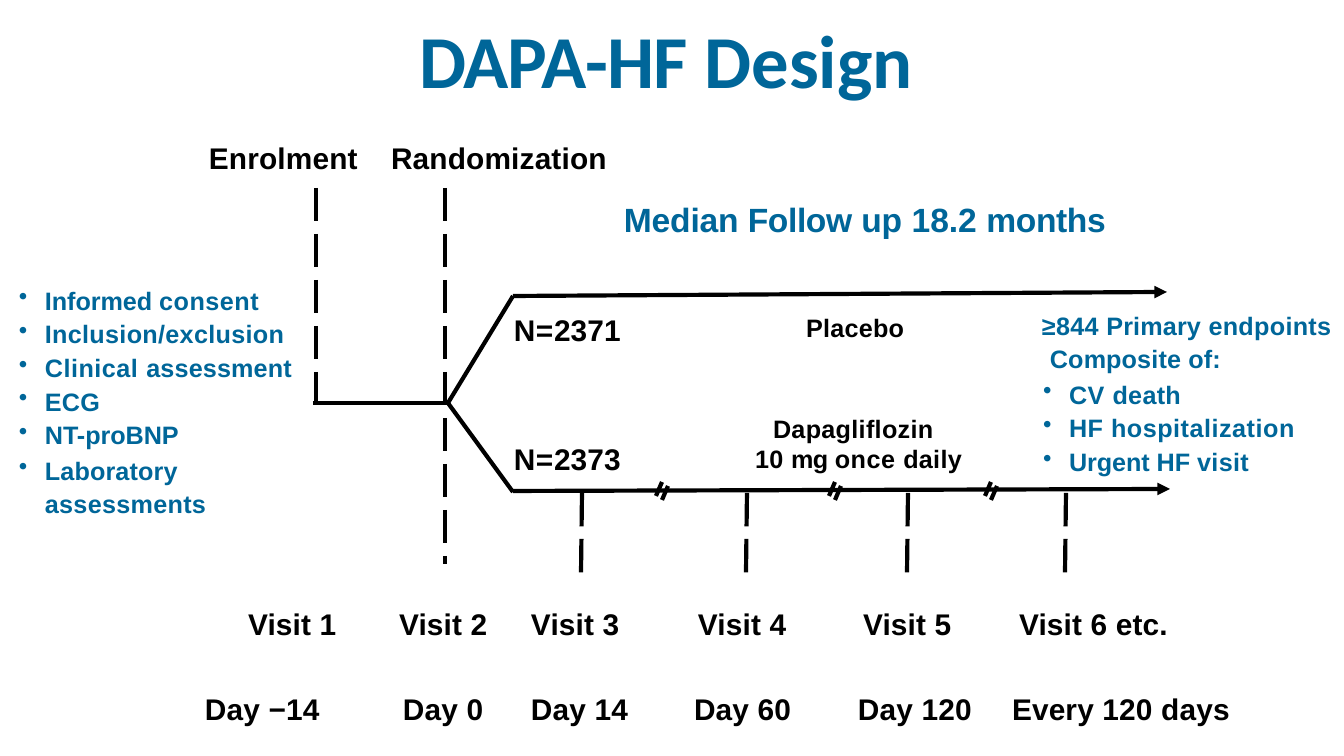
from pptx import Presentation
from pptx.dml.color import RGBColor
from pptx.enum.dml import MSO_LINE_DASH_STYLE as Dash
from pptx.enum.shapes import MSO_CONNECTOR as Conn
from pptx.oxml.ns import qn
from pptx.util import Emu, Pt
from lxml.etree import SubElement

SCALE = 914400 / 134.4  # EMU in one px
BLUE, BLACK = "006699", "000000"
HEAD = 16  # points
BODY = 13.5


def px(n):
    return Emu(round(n * SCALE))


def color(code):
    return RGBColor.from_string(code)


def line(slide, x1, y1, x2, y2, dash=False, arrow=False):
    """Draw a straight black line, dashed or with an arrowhead if asked."""
    link = slide.shapes.add_connector(Conn.STRAIGHT, px(x1), px(y1), px(x2), px(y2))
    link.line.color.rgb = color(BLACK)
    link.line.width = Pt(2.25)
    if dash:
        link.line.dash_style = Dash.LONG_DASH
    if arrow:
        SubElement(link.line._get_or_add_ln(), qn("a:tailEnd"), type="triangle")
    SubElement(link._element.spPr, qn("a:effectLst"))


def box(slide, x, y, w, h, inset=3):
    """Add an empty text box and return its frame."""
    frame = slide.shapes.add_textbox(px(x), px(y), px(w), px(h)).text_frame
    frame.word_wrap = True
    frame.margin_left = frame.margin_right = frame.margin_bottom = 0
    frame.margin_top = px(inset)
    return frame


def fill(para, runs, size, code, font="Arial", before=1.2, left=1, first=0):
    """Fill a paragraph with (text, letter spacing in points) runs."""
    para.space_before = Pt(before)
    props = para._p.get_or_add_pPr()
    props.set("marL", str(px(left)))
    props.set("indent", str(px(first)))
    for words, gap in runs:
        run = para.add_run()
        run.text = words
        run.font.name = font
        run.font.size = Pt(size)
        run.font.bold = True
        run.font.color.rgb = color(code)
        run._r.get_or_add_rPr().set("spc", str(round(gap * 100)))


def label(slide, x, y, w, h, runs, size=HEAD, code=BLACK, font="Arial"):
    """Put one line of text on the slide."""
    fill(box(slide, x, y, w, h).paragraphs[0], runs, size, code, font)


def bullets(slide, x, y, w, h, items):
    """Put a bulleted list on the slide."""
    frame = box(slide, x, y, w, h, inset=5)
    for i, runs in enumerate(items):
        para = frame.add_paragraph() if i else frame.paragraphs[0]
        fill(para, runs, BODY, BLUE, before=1.85 if i else 2.8, left=28, first=-26)
        SubElement(para._p.get_or_add_pPr(), qn("a:buChar"), char="•")
    return frame


def chart(slide):
    # Fork from enrolment into the two arms
    line(slide, 313, 403, 448, 403)
    line(slide, 448, 403, 513, 296)
    line(slide, 448, 403, 513, 492)
    line(slide, 513, 296, 1167, 292, arrow=True)
    line(slide, 513, 491, 1170, 489, arrow=True)

    # Enrolment, randomization and later visits
    line(slide, 316, 188, 316, 403, dash=True)
    line(slide, 445, 188, 445, 564, dash=True)
    for x in (582, 747, 908, 1066):
        line(slide, x, 493, x - 1, 574, dash=True)

    # Breaks in the time axis
    for x in (656, 829, 985):
        for dx, dy in ((0, 0), (6, 4)):
            line(slide, x + dx + 6, 482 + dy, x + dx, 496 + dy)


def arms(slide):
    # Group sizes and treatments
    for y, count in ((309, "2371"), (438, "2373")):
        label(slide, 513, y, 116, 40, [("N=", 0.3), (count, 0.1)])
    label(slide, 805, 309, 108, 35, [("Placebo", 0.17)], BODY)
    frame = box(slide, 754, 410, 219, 65)
    fill(frame.paragraphs[0], [("Dapagliflozin", 0.2)], BODY, BLACK, left=19)
    fill(frame.add_paragraph(),
         [("10 ", 0.2), ("mg ", -0.2), ("once ", 0.3), ("daily", 0.2)],
         BODY, BLACK, before=0)


def visits(slide):
    # Visit row and day row: x, width, text
    rows = {
        603: ((247, 95, "Visit 1"), (398, 95, "Visit 2"), (530, 95, "Visit 3"),
              (697, 95, "Visit 4"), (862, 95, "Visit 5"), (1018, 164, "Visit 6 etc.")),
        688: ((204, 130, "Day −14"), (402, 87, "Day 0"), (530, 103, "Day 14"),
              (693, 103, "Day 60"), (857, 121, "Day 120"), (1011, 224, "Every 120 days")),
    }
    for y, cells in rows.items():
        for x, w, words in cells:
            label(slide, x, y, w, 40, [(words, 0.1)])


def notes(slide):
    # Screening list on the left
    frame = bullets(slide, 17, 280, 280, 239, [
        [("Informed ", 0), ("consent", 0.3)],
        [("Inclusion/exclusion", 0.2)],
        [("Clinical ", 0.3), ("assessment", 0.1)],
        [("ECG", 0.2)],
        [("NT-proBNP", 0)],
        [("Laboratory ", 0.1), ("assessments", 0.2)],
    ])
    last = frame.paragraphs[-1]
    last.line_spacing = Pt(18)
    last.space_before = Pt(0.9)

    # Endpoints on the right
    frame = box(slide, 1041, 306, 300, 71, inset=1)
    fill(frame.paragraphs[0],
         [("≥844 ", 0.2), ("Primary ", 0.1), ("endpoints", 0.2)],
         BODY, BLUE, before=0.9)
    fill(frame.add_paragraph(), [("Composite of:", 0.1)], BODY, BLUE, before=0, left=9)
    for para in frame.paragraphs:
        para.line_spacing = 1.11
    bullets(slide, 1041, 374, 259, 105, [
        [("CV ", 0.3), ("death", 0.2)],
        [("HF hospitalization", 0.3)],
        [("Urgent HF ", 0), ("visit", 0.2)],
    ])


def main():
    deck = Presentation()
    deck.slide_width, deck.slide_height = px(1344), px(756)
    slide = deck.slides.add_slide(deck.slide_layouts[6])

    # Headings
    label(slide, 418, 11, 504, 94, [("DAPA-HF ", -0.4), ("Design", 0.1)],
          40, BLUE, "Calibri")
    label(slide, 208, 137, 158, 40, [("Enrolment", 0.1)])
    label(slide, 390, 137, 224, 40, [("Randomization", 0.1)])
    label(slide, 623, 196, 494, 44,
          [("Median ", -0.1), ("Follow ", -0.2), ("up 18.2 ", 0), ("months", -0.2)],
          18, BLUE)

    chart(slide)
    arms(slide)
    visits(slide)
    notes(slide)
    deck.save("out.pptx")


if __name__ == "__main__":
    main()
